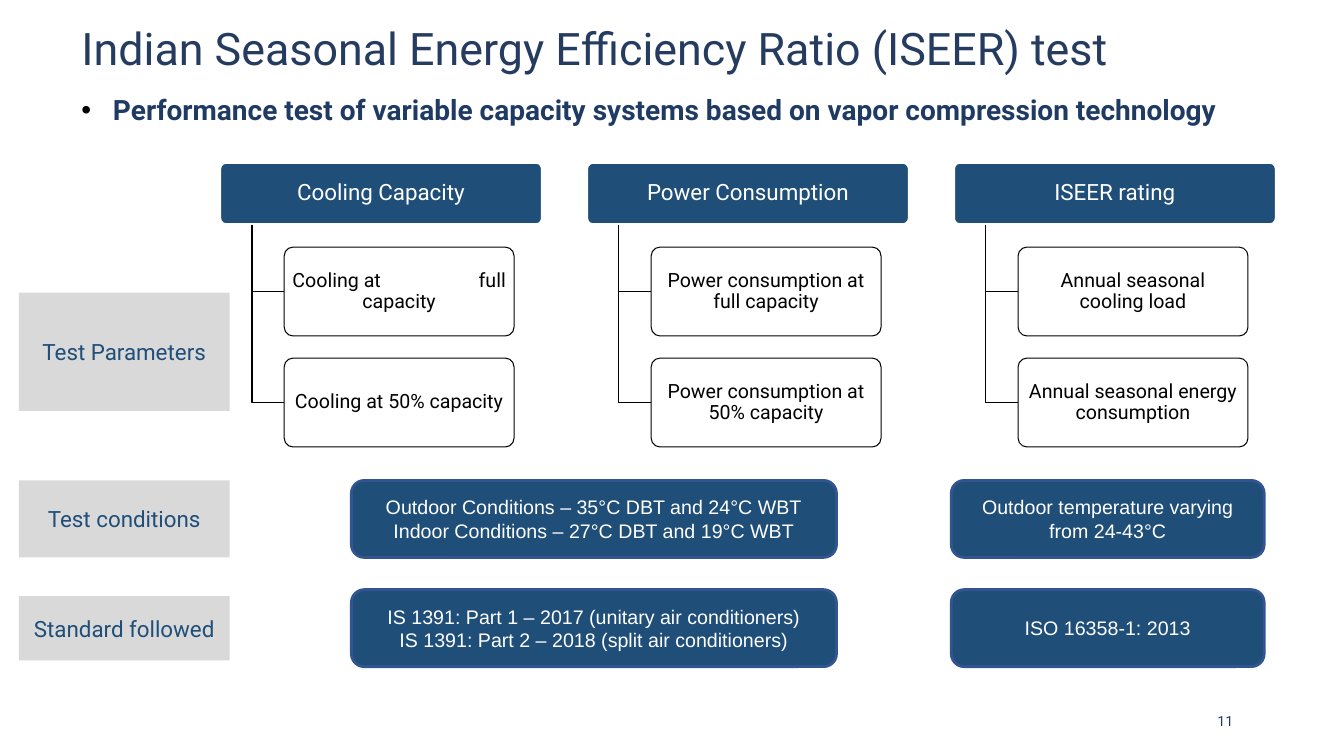
"""Build the ISEER test slide with its parameters, conditions and standards."""
from dataclasses import dataclass

from lxml.etree import SubElement
from pptx import Presentation
from pptx.dml.color import RGBColor
from pptx.enum.shapes import MSO_SHAPE
from pptx.enum.text import MSO_ANCHOR, MSO_AUTO_SIZE, PP_ALIGN
from pptx.oxml.ns import qn
from pptx.slide import Slide
from pptx.text.text import TextFrame, _Paragraph
from pptx.util import Pt

NAVY = RGBColor(0x1F, 0x4E, 0x79)
INK = RGBColor(0x25, 0x3C, 0x60)
DEEP = RGBColor(0x1F, 0x3B, 0x63)
EDGE = RGBColor(0x32, 0x54, 0x91)
GREY = RGBColor(0xD9, 0xD9, 0xD9)
WHITE = RGBColor(0xFF, 0xFF, 0xFF)
BLACK = RGBColor(0, 0, 0)


@dataclass(frozen=True)
class Look:
    """Style shared by boxes of one kind."""
    fill: RGBColor
    ink: RGBColor
    size: float
    font: str = "Roboto"
    edge: RGBColor | None = None
    width: float = 2
    bend: float = 0
    inset: float = 7.2
    lead: float = 1


@dataclass(frozen=True)
class Box:
    """Place, lines of text and style of one box."""
    left: float
    top: float
    width: float
    height: float
    lines: tuple[str, ...]
    look: Look


@dataclass(frozen=True)
class Branch:
    """A heading and the boxes that hang from it."""
    head: str
    leaves: tuple[tuple[str, ...], ...]


HEAD = Look(NAVY, WHITE, 16, edge=WHITE, bend=0.1, inset=2, lead=0.9)
LEAF = Look(WHITE, BLACK, 14, edge=BLACK, width=0.75, bend=0.1, inset=4, lead=0.9)
LABEL = Look(GREY, NAVY, 16)
CARD = Look(NAVY, WHITE, 14, font="Arial", edge=EDGE, bend=0.1667)

TREE = (
    Branch("Cooling Capacity", (("Cooling at\tfull", "capacity"),
                                ("Cooling at 50% capacity",))),
    Branch("Power Consumption", (("Power consumption at full capacity",),
                                 ("Power consumption at 50% capacity",))),
    Branch("ISEER rating", (("Annual seasonal cooling load",),
                            ("Annual seasonal energy consumption",))),
)

BOXES = (
    Box(13.5, 209, 150.5, 84.5, ("Test Parameters",), LABEL),
    Box(13.5, 343.2, 150.5, 55, ("Test conditions",), LABEL),
    Box(13.5, 425.8, 150.5, 46, ("Standard followed",), LABEL),
    Box(251, 343.2, 346.5, 55, ("Outdoor Conditions – 35°C DBT and 24°C WBT",
                                "Indoor Conditions – 27°C DBT and 19°C WBT"), CARD),
    Box(679.5, 343.2, 223.5, 55, ("Outdoor temperature varying from 24-43°C",), CARD),
    Box(251, 421.2, 346.5, 55, ("IS 1391: Part 1 – 2017 (unitary air conditioners)",
                                "IS 1391: Part 2 – 2018 (split air conditioners)"), CARD),
    Box(679.5, 421.2, 223.5, 55, ("ISO 16358-1: 2013",), CARD),
)


def write(para: _Paragraph, text: str, size: float, ink: RGBColor,
          font: str = "Roboto", bold: bool = False) -> None:
    """Add one styled run to a paragraph."""
    run = para.add_run()
    run.text = text
    run.font.size, run.font.name, run.font.bold = Pt(size), font, bold
    run.font.color.rgb = ink


def set_frame(frame: TextFrame, side: float = 7.2, edge: float = 3.6) -> None:
    """Wrap and centre the text of a frame, with fixed insets."""
    frame.word_wrap = True
    frame.auto_size = MSO_AUTO_SIZE.NONE
    frame.vertical_anchor = MSO_ANCHOR.MIDDLE
    frame.margin_left = frame.margin_right = Pt(side)
    frame.margin_top = frame.margin_bottom = Pt(edge)


def add_stop(para: _Paragraph, place: float) -> None:
    """Align a paragraph left, with a right tab stop."""
    para.alignment = PP_ALIGN.LEFT
    stops = SubElement(para._p.get_or_add_pPr(), qn("a:tabLst"))
    SubElement(stops, qn("a:tab"), pos=str(Pt(place)), algn="r")


def draw_box(slide: Slide, box: Box) -> None:
    """Draw a box with its text."""
    look = box.look
    kind = MSO_SHAPE.ROUNDED_RECTANGLE if look.bend else MSO_SHAPE.RECTANGLE
    shape = slide.shapes.add_shape(kind, Pt(box.left), Pt(box.top),
                                   Pt(box.width), Pt(box.height))
    shape.shadow.inherit = False
    if look.bend:
        shape.adjustments[0] = look.bend
    shape.fill.solid()
    shape.fill.fore_color.rgb = look.fill
    if look.edge is None:
        shape.line.fill.background()
    else:
        shape.line.color.rgb = look.edge
        shape.line.width = Pt(look.width)
    frame = shape.text_frame
    set_frame(frame, look.inset, min(look.inset, 3.6))
    for i, line in enumerate(box.lines):
        para = frame.add_paragraph() if i else frame.paragraphs[0]
        para.alignment = PP_ALIGN.CENTER
        if "\t" in line:
            add_stop(para, 153)
        para.line_spacing = look.lead
        write(para, line, look.size, look.ink, look.font)


def draw_elbow(slide: Slide, left: float, top: float, right: float, low: float) -> None:
    """Draw a line that runs down and then right."""
    pen = slide.shapes.build_freeform(Pt(left), Pt(top))
    pen.add_line_segments([(Pt(left), Pt(low)), (Pt(right), Pt(low))], close=False)
    elbow = pen.convert_to_shape()
    elbow.shadow.inherit = False
    elbow.fill.background()
    elbow.line.color.rgb = BLACK
    elbow.line.width = Pt(0.75)


def draw_branch(slide: Slide, left: float, branch: Branch) -> None:
    """Draw a heading with its boxes and elbows."""
    top, tall, leaf = 116, 44.5, 63.5
    draw_box(slide, Box(left, top, 230.4, tall, (branch.head,), HEAD))
    for row, lines in enumerate(branch.leaves):
        y = 176.5 + row * 79.3
        draw_elbow(slide, left + 23, top + tall, left + 46, y + leaf / 2)
        draw_box(slide, Box(left + 46, y, 164.2, leaf, lines, LEAF))


def fill_text(slide: Slide) -> None:
    """Fill the title, the bullet and the slide number."""
    title, body = slide.shapes.title, slide.placeholders[1]
    title.left, title.top, title.width, title.height = Pt(51), Pt(10), Pt(885.5), Pt(53)
    body.left, body.top, body.width, body.height = Pt(51), Pt(62.5), Pt(885.5), Pt(31.5)
    number = slide.shapes.add_textbox(Pt(857), Pt(500.5), Pt(36.5), Pt(28.8))
    for shape in (title, body, number):
        set_frame(shape.text_frame)

    head = title.text_frame.paragraphs[0]
    head.alignment = PP_ALIGN.LEFT
    head.line_spacing = 0.9
    write(head, "Indian Seasonal Energy Efficiency Ratio (ISEER) test", 32, INK)

    point = body.text_frame.paragraphs[0]
    props = point._p.get_or_add_pPr()
    props.set("marL", str(Pt(22.5)))
    props.set("indent", str(Pt(-22.5)))
    tint = SubElement(props, qn("a:buClr"))
    SubElement(tint, qn("a:srgbClr"), val=str(BLACK))
    SubElement(props, qn("a:buFont"), typeface="Arial")
    SubElement(props, qn("a:buChar"), char="•")
    point.space_before = Pt(0)
    write(point, "Performance test of variable capacity systems based on "
          "vapor compression technology", 20, DEEP, bold=True)

    page = number.text_frame.paragraphs[0]
    page.alignment = PP_ALIGN.CENTER
    write(page, "11", 10, DEEP)


def main() -> None:
    """Build and save the slide."""
    deck = Presentation()
    deck.slide_width, deck.slide_height = Pt(960), Pt(540)
    slide = deck.slides.add_slide(deck.slide_layouts[1])
    fill_text(slide)
    for i, branch in enumerate(TREE):
        draw_branch(slide, 157 + i * 262.1, branch)
    for box in BOXES:
        draw_box(slide, box)
    deck.save("out.pptx")


if __name__ == "__main__":
    main()
